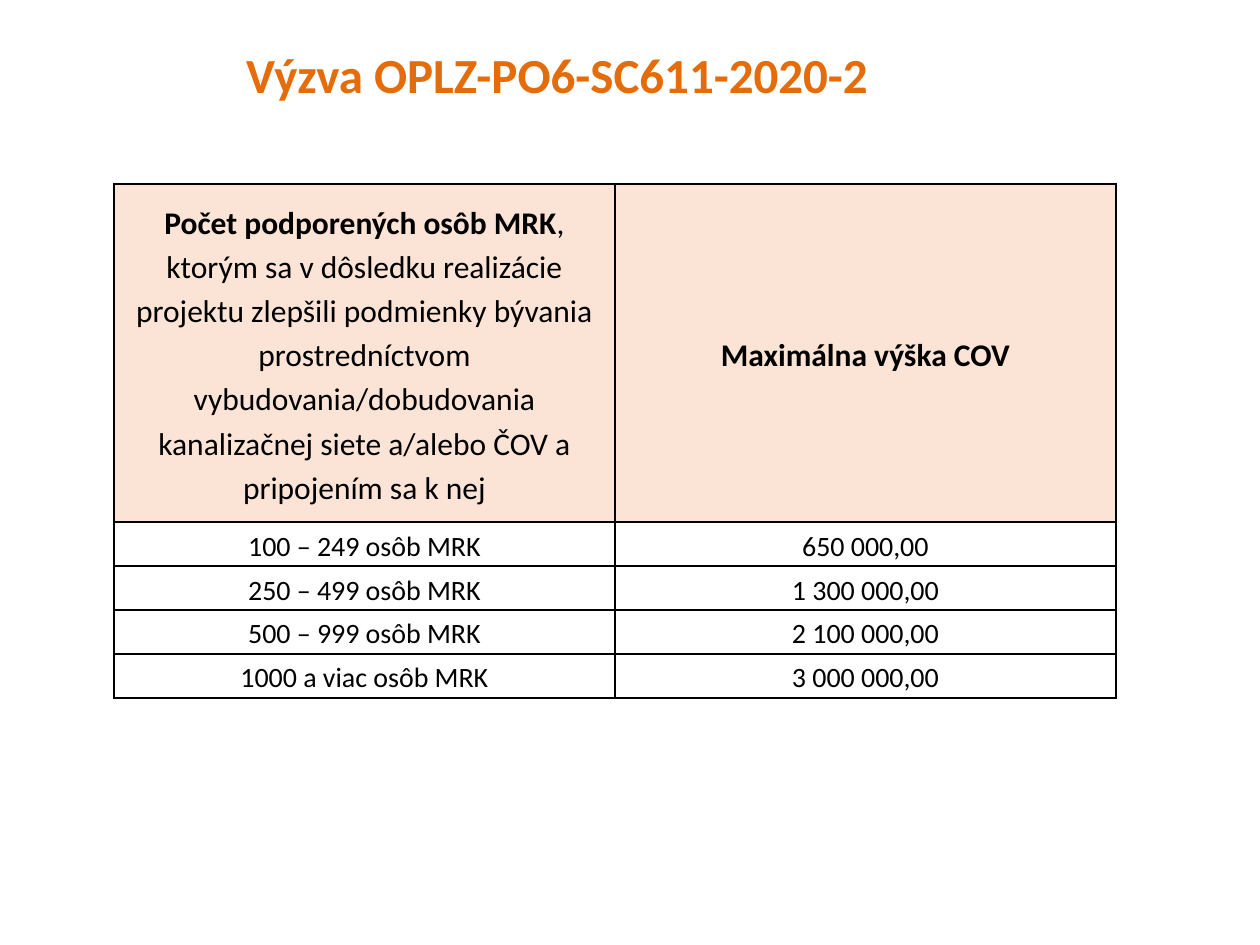
import pptx
import pptx.dml.color
import pptx.enum.text
import pptx.oxml
import pptx.oxml.ns
import pptx.util

PX = pptx.util.Inches(1) / 126
COLORS = {"title": "E46C0A", "text": "000000", "header": "FBE4D5", "border": "000000"}
FONT = "Calibri"
HEADER = [
    [("Počet podporených osôb MRK", True),
     (", ktorým sa v dôsledku realizácie projektu zlepšili podmienky bývania "
      "prostredníctvom vybudovania/dobudovania kanalizačnej siete a/alebo ČOV "
      "a pripojením sa k nej", False)],
    [("Maximálna výška COV", True)],
]
LIMITS = [
    ("100 – 249 osôb MRK", "650 000,00"),
    ("250 – 499 osôb MRK", "1 300 000,00"),
    ("500 – 999 osôb MRK", "2 100 000,00"),
    ("1000 a viac osôb MRK", "3 000 000,00"),
]


def px(n):
    """Turn pixels into EMU."""
    return pptx.util.Emu(round(n * PX))


def rgb(name):
    """Look up a named colour."""
    return pptx.dml.color.RGBColor.from_string(COLORS[name])


def add_text(p, text, size=16, bold=False, color="text"):
    """Add a formatted run to a centred paragraph."""
    p.alignment = pptx.enum.text.PP_ALIGN.CENTER
    r = p.add_run()
    r.text = text
    r.font.name = FONT
    r.font.size = pptx.util.Pt(size)
    r.font.bold = bold
    r.font.color.rgb = rgb(color)


def add_borders(cell):
    """Draw a thin line on every side of a cell."""
    tc_pr = cell._tc.get_or_add_tcPr()
    for i, side in enumerate(("lnL", "lnR", "lnT", "lnB")):
        tc_pr.insert(i, pptx.oxml.parse_xml(
            f'<a:{side} {pptx.oxml.ns.nsdecls("a")} w="12700"><a:solidFill>'
            f'<a:srgbClr val="{COLORS["border"]}"/></a:solidFill></a:{side}>'))


def format_cell(cell, runs, size, fill=None, space_after=0):
    """Fill a cell with text runs and set its look."""
    cell.margin_left = cell.margin_right = px(9)
    cell.margin_top = cell.margin_bottom = 0
    cell.vertical_anchor = pptx.enum.text.MSO_ANCHOR.MIDDLE
    if fill:
        cell.fill.solid()
        cell.fill.fore_color.rgb = rgb(fill)
    else:
        cell.fill.background()
    add_borders(cell)
    p = cell.text_frame.paragraphs[0]
    p.line_spacing = 1.15
    p.space_after = pptx.util.Pt(space_after)
    for text, bold in runs:
        add_text(p, text, size=size, bold=bold)


def place_title(slide, x, y, w, h):
    """Place the slide title in its box."""
    sp = slide.shapes.title
    sp.left, sp.top, sp.width, sp.height = map(px, (x, y, w, h))
    tf = sp.text_frame
    tf.vertical_anchor = pptx.enum.text.MSO_ANCHOR.MIDDLE
    add_text(tf.paragraphs[0], "Výzva OPLZ-PO6-SC611-2020-2",
             size=28, bold=True, color="title")


def place_table(slide, x, y, w, h, row_h=44):
    """Place the table of cost limits in its box."""
    frame = slide.shapes.add_table(len(LIMITS) + 1, len(HEADER), *map(px, (x, y, w, h)))
    table = frame.table
    table.horz_banding = False
    table.rows[0].height = px(h - row_h * len(LIMITS))
    for col, runs in enumerate(HEADER):
        format_cell(table.cell(0, col), runs, 18, fill="header", space_after=6)
    for row, values in enumerate(LIMITS, 1):
        table.rows[row].height = px(row_h)
        for col, value in enumerate(values):
            format_cell(table.cell(row, col), [(value, False)], 16)


def main():
    """Build and save the slide."""
    prs = pptx.Presentation()
    prs.slide_width, prs.slide_height = px(1260), px(945)
    slide = prs.slides.add_slide(prs.slide_layouts[5])
    place_title(slide, 58, 35, 998, 78)
    place_table(slide, 114, 184, 1002, 514)
    prs.save("out.pptx")


if __name__ == "__main__":
    main()
